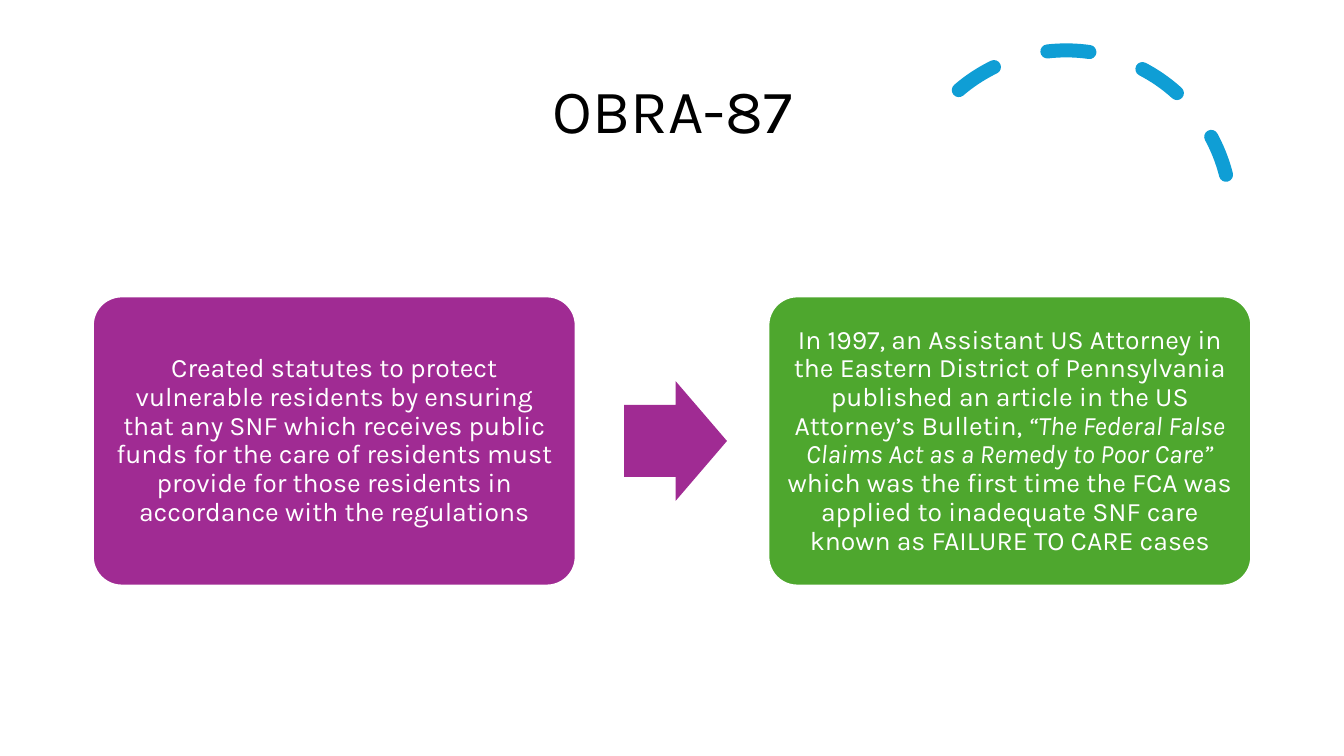
from dataclasses import dataclass

from lxml import etree
from pptx import Presentation
from pptx.dml.color import RGBColor
from pptx.enum.dml import MSO_LINE
from pptx.enum.shapes import MSO_SHAPE
from pptx.enum.text import MSO_ANCHOR, MSO_AUTO_SIZE, PP_ALIGN
from pptx.util import Pt

ARC, ARROW, ROUND = MSO_SHAPE.ARC, MSO_SHAPE.RIGHT_ARROW, MSO_SHAPE.ROUNDED_RECTANGLE
CENTER, MIDDLE = PP_ALIGN.CENTER, MSO_ANCHOR.MIDDLE
DASH, NO_FIT = MSO_LINE.DASH, MSO_AUTO_SIZE.NONE
TITLE_ONLY = 5
PX = 9144  # EMU per px, 100 px to the inch


@dataclass(frozen=True)
class Theme:
    font: str = "Karla"
    white: str = "FFFFFF"
    black: str = "000000"
    blue: str = "0F9ED5"
    purple: str = "A02B93"
    green: str = "4EA72E"
    title: int = 44
    body: int = 19


@dataclass(frozen=True)
class Box:
    left: int
    top: int
    width: int
    height: int

    def emu(self) -> list[int]:
        return [n * PX for n in (self.left, self.top, self.width, self.height)]


@dataclass(frozen=True)
class Run:
    text: str
    italic: bool = False


@dataclass(frozen=True)
class Card:
    fill: str
    runs: tuple[Run, ...]


THEME = Theme()
CARD = Box(92, 294, 479, 287)
STEP = 670  # left edge to left edge of the cards
CARDS = (
    Card(THEME.purple, (
        Run("Created statutes to protect vulnerable residents by ensuring that any SNF "
            "which receives public funds for the care of residents must provide for "
            "those residents in accordance with the regulations"),
    )),
    Card(THEME.green, (
        Run("In 1997, an Assistant US Attorney in the Eastern District of Pennsylvania "
            "published an article in the US Attorney’s Bulletin, "),
        Run("“The Federal False Claims Act as a Remedy to Poor Care” ", True),
        Run("which was the first time the FCA was applied to inadequate SNF care "
            "known as FAILURE TO CARE cases"),
    )),
)


def apply(target, values: dict) -> None:
    for name, value in values.items():
        setattr(target, name, value)


def write(shape, runs: tuple[Run, ...], size: int, color: str, pad: dict) -> None:
    frame = shape.text_frame
    apply(frame, {"word_wrap": True, "auto_size": NO_FIT, "vertical_anchor": MIDDLE, **pad})
    para = frame.paragraphs[0]
    apply(para, {"alignment": CENTER, "line_spacing": 0.9})
    for item in runs:
        run = para.add_run()
        run.text = item.text
        apply(run.font, {"name": THEME.font, "size": Pt(size), "italic": item.italic})
        run.font.color.rgb = RGBColor.from_string(color)


def draw(slide, kind, box: Box, adjust: tuple[float, ...], fill: str = "",
         line: str = "", weight: float = 0):
    shape = slide.shapes.add_shape(kind, *box.emu())
    shape.shadow.inherit = False
    for i, value in enumerate(adjust):
        shape.adjustments[i] = value
    if fill:
        shape.fill.solid()
        shape.fill.fore_color.rgb = RGBColor.from_string(fill)
    else:
        shape.fill.background()
    if line:
        shape.line.color.rgb = RGBColor.from_string(line)
        shape.line.width = Pt(weight)
    else:
        shape.line.fill.background()
    return shape


def main() -> None:
    deck = Presentation()
    apply(deck, {"slide_width": 1333 * PX, "slide_height": 750 * PX})
    slide = deck.slides.add_slide(deck.slide_layouts[TITLE_ONLY])

    # Title
    title = slide.shapes.title
    spot = Box(92, 40, 1150, 145).emu()
    apply(title, dict(zip(("left", "top", "width", "height"), spot)))
    write(title, (Run("OBRA-87"),), THEME.title, THEME.black, {})

    # Dashed arc with round caps
    arc = draw(slide, ARC, Box(894, 50, 327, 327), (146.13, 0), line=THEME.blue, weight=10)
    arc.rotation = 345.8
    arc.line.dash_style = DASH
    ln = arc.line.fill._xPr
    ln.set("cap", "rnd")
    etree.SubElement(ln, ln.tag.replace("}ln", "}round"))

    # Cards
    sides = ("left", "top", "right", "bottom")
    pad = {f"margin_{side}": 8 * PX for side in sides}
    for i, card in enumerate(CARDS):
        box = Box(CARD.left + i * STEP, CARD.top, CARD.width, CARD.height)
        shape = draw(slide, ROUND, box, (0.1,), card.fill, THEME.white, 1.5)
        write(shape, card.runs, THEME.body, THEME.white, pad)

    # Arrow between the cards
    draw(slide, ARROW, Box(619, 378, 102, 119), (0.6, 0.5), THEME.purple)

    deck.save("out.pptx")


if __name__ == "__main__":
    main()
